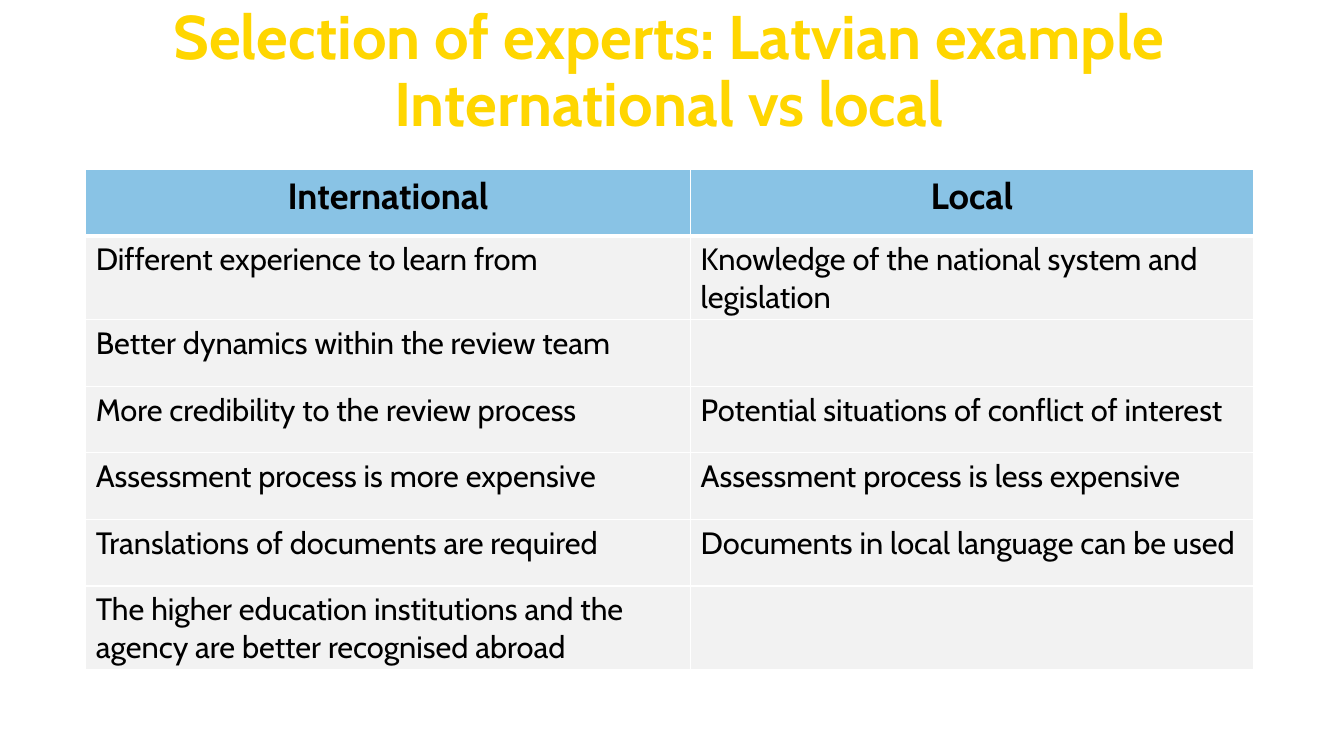
import pptx
import pptx.util
import pptx.dml.color
import pptx.enum.text
import pptx.oxml
import pptx.oxml.ns
from dataclasses import dataclass

Inches = pptx.util.Inches
Pt = pptx.util.Pt
PP_ALIGN = pptx.enum.text.PP_ALIGN


@dataclass(frozen=True)
class Theme:
    font: str = "Cabin"
    title_color: str = "FFD600"
    text_color: str = "000000"
    header_fill: str = "89C3E5"
    body_fill: str = "F2F2F2"
    border_color: str = "FFFFFF"
    title_size: int = 44
    header_size: int = 26
    body_size: int = 22


theme = Theme()


def style_text(paragraph, size, color, bold):
    for run in paragraph.runs:
        run.font.name = theme.font
        run.font.size = Pt(size)
        run.font.bold = bold
        run.font.color.rgb = pptx.dml.color.RGBColor.from_string(color)


def add_borders(cell, bottom_width, top_width):
    properties = cell._tc.get_or_add_tcPr()
    widths = {"lnL": 1, "lnR": 1, "lnT": top_width, "lnB": bottom_width}
    for position, (side, width) in enumerate(widths.items()):
        border = pptx.oxml.parse_xml(
            f'<a:{side} {pptx.oxml.ns.nsdecls("a")} w="{Pt(width)}"><a:solidFill>'
            f'<a:srgbClr val="{theme.border_color}"/></a:solidFill></a:{side}>'
        )
        properties.insert(position, border)


presentation = pptx.Presentation()
presentation.slide_width = Inches(13.33)
presentation.slide_height = Inches(7.5)
slide = presentation.slides.add_slide(presentation.slide_layouts[6])

title = slide.shapes.add_textbox(Inches(0.44), Inches(0), Inches(12.39), Inches(1.45))
title.text_frame.word_wrap = True
title.text_frame.vertical_anchor = pptx.enum.text.MSO_ANCHOR.MIDDLE
title.text_frame.text = "Selection of experts: Latvian example\vInternational vs local"
heading = title.text_frame.paragraphs[0]
heading.alignment = PP_ALIGN.CENTER
heading.line_spacing = 0.9
style_text(heading, theme.title_size, theme.title_color, True)

comparison = [
    ("International", "Local"),
    ("Different experience to learn from", "Knowledge of the national system and legislation"),
    ("Better dynamics within the review team", ""),
    ("More credibility to the review process", "Potential situations of conflict of interest"),
    ("Assessment process is more expensive", "Assessment process is less expensive"),
    ("Translations of documents are required", "Documents in local language can be used"),
    ("The higher education institutions and the agency are better recognised abroad", ""),
]
row_height = Inches(0.66)
experts = slide.shapes.add_table(
    len(comparison), 2, Inches(0.85), Inches(1.68), Inches(11.58), row_height * len(comparison)
).table
experts.columns[0].width = Inches(6)
experts.columns[1].width = Inches(5.58)

for row_index, entries in enumerate(comparison):
    experts.rows[row_index].height = row_height
    is_header = row_index == 0
    for column_index, entry in enumerate(entries):
        cell = experts.cell(row_index, column_index)
        cell.text_frame.text = entry
        paragraph = cell.text_frame.paragraphs[0]
        paragraph.alignment = PP_ALIGN.CENTER if is_header else PP_ALIGN.LEFT
        size = theme.header_size if is_header else theme.body_size
        style_text(paragraph, size, theme.text_color, is_header)
        fill_color = theme.header_fill if is_header else theme.body_fill
        cell.fill.solid()
        cell.fill.fore_color.rgb = pptx.dml.color.RGBColor.from_string(fill_color)
        add_borders(cell, 3 if is_header else 1, 3 if row_index == 1 else 1)

presentation.save("out.pptx")
